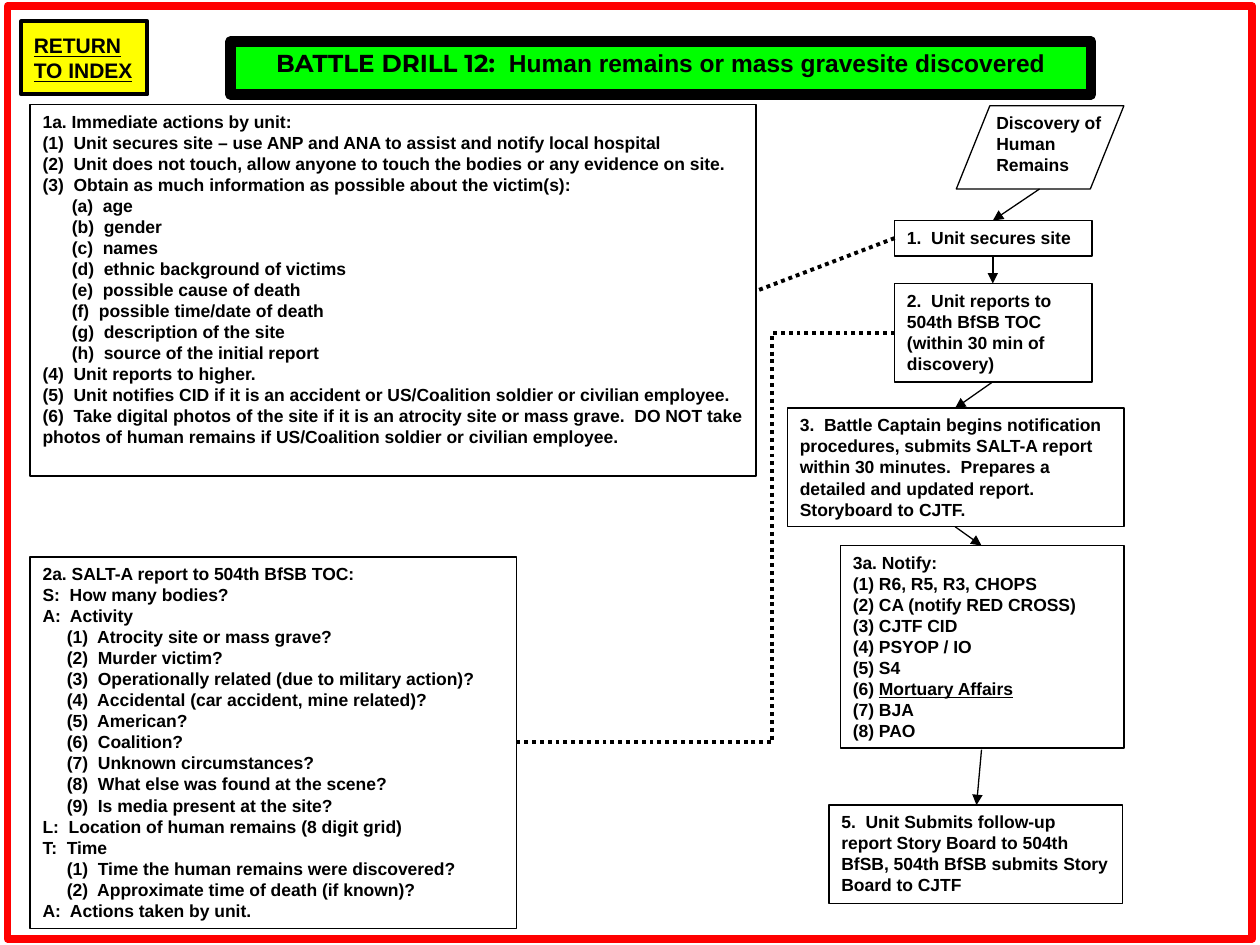
from lxml.etree import SubElement
from pptx import Presentation
from pptx.dml.color import RGBColor
from pptx.enum.dml import MSO_LINE
from pptx.enum.shapes import MSO_CONNECTOR, MSO_SHAPE
from pptx.enum.text import MSO_ANCHOR, PP_ALIGN
from pptx.oxml.ns import qn
from pptx.util import Inches, Pt

BLACK = RGBColor(0, 0, 0)
WHITE = RGBColor(255, 255, 255)
RED = RGBColor(255, 0, 0)
YELLOW = RGBColor(255, 255, 0)
GREEN = RGBColor(0, 255, 0)

deck = Presentation()
deck.slide_width, deck.slide_height = Inches(10), Inches(7.5)
COL = deck.slide_width / 100
ROW = deck.slide_height / 75
slide = deck.slides.add_slide(deck.slide_layouts[6])
shapes = slide.shapes


def add_box(place, lines=(), fill=None, edge=BLACK, width=1, size=10,
            indent=0, kind=MSO_SHAPE.RECTANGLE):
    left, top, wide, high = place
    box = shapes.add_shape(kind, round(left * COL), round(top * ROW),
                           round(wide * COL), round(high * ROW))
    box.shadow.inherit = False
    if fill is None:
        box.fill.background()
    else:
        box.fill.solid()
        box.fill.fore_color.rgb = fill
    if edge is None:
        box.line.fill.background()
    else:
        box.line.color.rgb = edge
        box.line.width = Pt(width)
    frame = box.text_frame
    frame.word_wrap = True
    frame.vertical_anchor = MSO_ANCHOR.TOP
    for num, line in enumerate(lines):
        para = frame.add_paragraph() if num else frame.paragraphs[0]
        para.text = line.lstrip("\t")
        para.alignment = PP_ALIGN.LEFT
        font = para.font
        font.name, font.size, font.bold = "Arial", Pt(size), True
        font.color.rgb = BLACK
        if line.startswith("\t"):
            para._p.get_or_add_pPr().set("marL", str(round(indent * COL)))
    return box


def add_link(start, end, width=0.75, kind=MSO_CONNECTOR.STRAIGHT, dotted=False):
    link = shapes.add_connector(kind, round(start[0] * COL), round(start[1] * ROW),
                                round(end[0] * COL), round(end[1] * ROW))
    link.line.color.rgb = BLACK
    link.line.width = Pt(width)
    if dotted:
        link.line.dash_style = MSO_LINE.ROUND_DOT
    else:
        SubElement(link.line._get_or_add_ln(), qn("a:tailEnd"), type="triangle")
    SubElement(link._element.spPr, qn("a:effectLst"))
    return link


add_box((0.6, 0.5, 98.8, 74), edge=RED, width=4.5)

button = add_box((1.7, 1.7, 10, 5.8), ["RETURN", "TO INDEX"],
                 fill=YELLOW, width=2.25, size=12)
button.text_frame.word_wrap = False
button.text_frame.vertical_anchor = MSO_ANCHOR.MIDDLE
for para in button.text_frame.paragraphs:
    para.font.underline = True

add_box((2.4, 44.2, 38.6, 29.5), [
    "2a. SALT-A report to 504th BfSB TOC:",
    "S:  How many bodies?",
    "A:  Activity",
    "\t(1)  Atrocity site or mass grave?",
    "\t(2)  Murder victim?",
    "\t(3)  Operationally related (due to military action)?",
    "\t(4)  Accidental (car accident, mine related)?",
    "\t(5)  American?",
    "\t(6)  Coalition?",
    "\t(7)  Unknown circumstances?",
    "\t(8)  What else was found at the scene?",
    "\t(9)  Is media present at the site?",
    "L:  Location of human remains (8 digit grid)",
    "T:  Time",
    "\t(1)  Time the human remains were discovered?",
    "\t(2)  Approximate time of death (if known)?",
    "A:  Actions taken by unit.",
], indent=1.93)

add_box((2.4, 8.3, 57.6, 29.5), [
    "1a. Immediate actions by unit:",
    "(1)  Unit secures site – use ANP and ANA to assist and notify local hospital",
    "(2)  Unit does not touch, allow anyone to touch the bodies or any evidence on site.",
    "(3)  Obtain as much information as possible about the victim(s):",
    "\t(a)  age",
    "\t(b)  gender",
    "\t(c)  names",
    "\t(d)  ethnic background of victims",
    "\t(e)  possible cause of death",
    "\t(f)  possible time/date of death",
    "\t(g)  description of the site",
    "\t(h)  source of the initial report",
    "(4)  Unit reports to higher.",
    "(5)  Unit notifies CID if it is an accident or US/Coalition soldier or civilian employee.",
    "(6)  Take digital photos of the site if it is an atrocity site or mass grave.  DO NOT take "
    "photos of human remains if US/Coalition soldier or civilian employee.",
], fill=WHITE, indent=2.32)

label = add_box((78.1, 8.4, 10.4, 6), ["Discovery of Human Remains"], edge=None)
slant = add_box((75.9, 8.4, 13.3, 6.6), width=0.75, kind=MSO_SHAPE.FLOWCHART_DATA)
shapes.add_group_shape([label, slant])

add_box((71, 17.5, 15.7, 2.8), ["1.  Unit secures site"])
add_box((71, 22.5, 15.7, 7.8),
        ["2.  Unit reports to 504th BfSB TOC (within 30 min of discovery)"])

add_link((71, 18.9), (60, 23.1), width=2.25, dotted=True)
elbow = add_link((71, 26.4), (41, 58.9), width=2.25,
                 kind=MSO_CONNECTOR.ELBOW, dotted=True)
guides = elbow._element.spPr.find(qn("a:prstGeom")).get_or_add_avLst()
SubElement(guides, qn("a:gd"), name="adj1", fmla="val 32300")

title = add_box((18.3, 3.3, 68.3, 4.2), ["BATTLE DRILL 12:"],
                fill=GREEN, width=6, size=14)
head = title.text_frame.paragraphs[0]
head.alignment = PP_ALIGN.CENTER
head.runs[0].font.name = "Montserrat"
head.add_run().text = "  Human remains or mass gravesite discovered"

add_box((62.5, 32.4, 26.7, 9.4), [
    "3.  Battle Captain begins notification procedures, submits SALT-A report "
    "within 30 minutes.  Prepares a detailed and updated report.  Storyboard to CJTF."])

notice = add_box((66.7, 43.3, 22.5, 16.1), [
    "3a. Notify:",
    "(1) R6, R5, R3, CHOPS",
    "(2) CA (notify RED CROSS)",
    "(3) CJTF CID",
    "(4) PSYOP / IO",
    "(5) S4",
    "(6) ",
    "(7) BJA",
    "(8) PAO",
])
affairs = notice.text_frame.paragraphs[6].add_run()
affairs.text = "Mortuary Affairs"
affairs.font.underline = True

add_box((65.8, 63.9, 23.3, 7.8), [
    "5.  Unit Submits follow-up report Story Board to 504th BfSB, "
    "504th BfSB submits Story Board to CJTF"])

for start, end in [
    ((82.5, 15), (78.8, 17.5)),
    ((78.8, 20.3), (78.8, 22.5)),
    ((78.8, 30.3), (75.8, 32.4)),
    ((75.8, 41.8), (77.9, 43.3)),
    ((77.9, 59.5), (77.5, 63.9)),
]:
    add_link(start, end)

deck.save("out.pptx")
